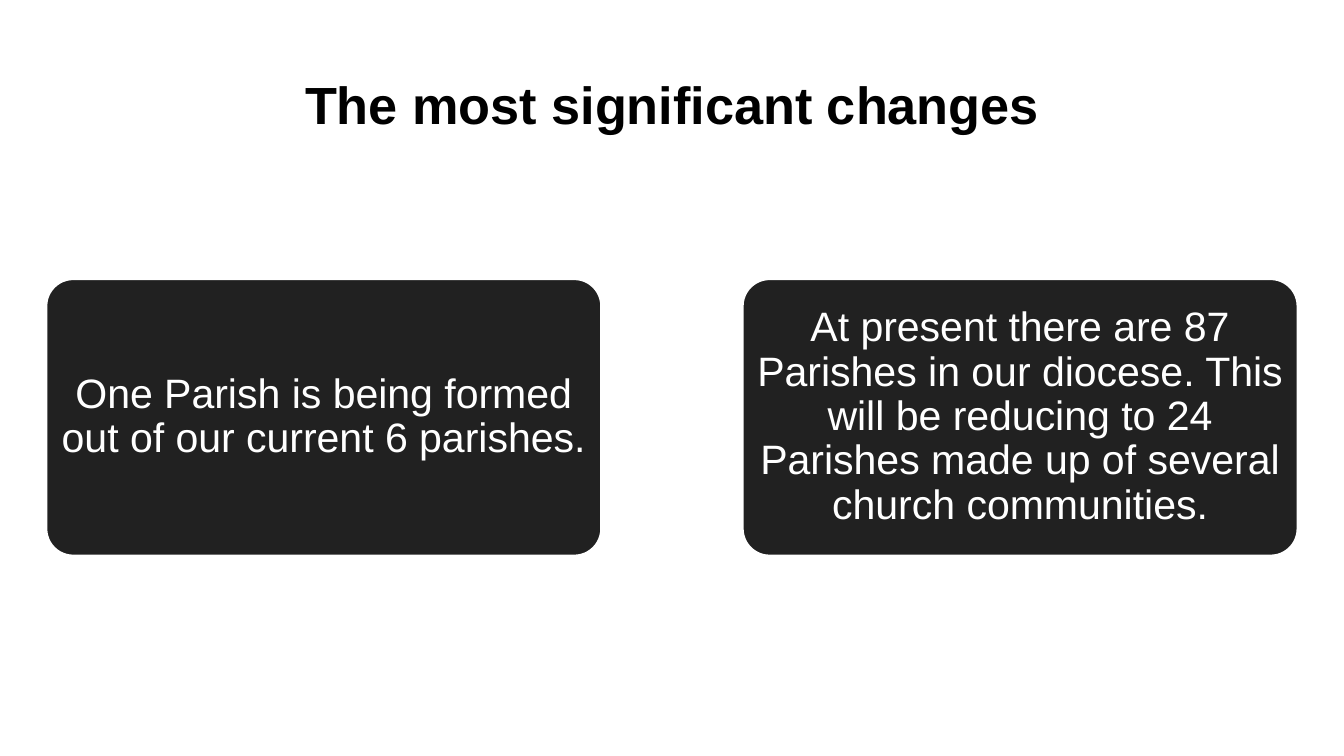
import pptx
import pptx.dml.color
import pptx.enum.shapes
import pptx.enum.text
import pptx.util
from pptx.util import Cm

BLACK = pptx.dml.color.RGBColor(0x00, 0x00, 0x00)
CHARCOAL = pptx.dml.color.RGBColor(0x21, 0x21, 0x21)
WHITE = pptx.dml.color.RGBColor(0xFF, 0xFF, 0xFF)

TITLE_ONLY_LAYOUT = 5
MARGIN = Cm(0.86)
CARD_WIDTH = Cm(10.52)
CARD_HEIGHT = Cm(5.26)
CARD_TOP = Cm(5.26)

TITLE = "The most significant changes"
CHANGES = [
    "One Parish is being formed out of our current 6 parishes.",
    "At present there are 87 Parishes in our diocese. This will be "
    "reducing to 24 Parishes made up of several church communities.",
]


def write_text(shape, text, color, size, bold, inset_x, inset_y):
    """Fill a shape with one centred paragraph."""
    frame = shape.text_frame
    frame_format = {
        "word_wrap": True,
        "auto_size": pptx.enum.text.MSO_AUTO_SIZE.NONE,
        "vertical_anchor": pptx.enum.text.MSO_ANCHOR.MIDDLE,
        "margin_left": inset_x,
        "margin_right": inset_x,
        "margin_top": inset_y,
        "margin_bottom": inset_y,
    }
    for name, value in frame_format.items():
        setattr(frame, name, value)

    paragraph = frame.paragraphs[0]
    paragraph.alignment = pptx.enum.text.PP_ALIGN.CENTER
    paragraph.line_spacing = 0.9
    run = paragraph.add_run()
    run.text = text
    font_format = {"name": "Arial", "size": pptx.util.Pt(size), "bold": bold}
    for name, value in font_format.items():
        setattr(run.font, name, value)
    run.font.color.rgb = color


def place_title(slide, left, top, width, height):
    title = slide.shapes.title
    box = {"left": left, "top": top, "width": width, "height": height}
    for name, value in box.items():
        setattr(title, name, value)
    write_text(title, TITLE, BLACK, 28, True, Cm(0.25), Cm(0.25))


def place_card(slide, text, left, top, width, height):
    card = slide.shapes.add_shape(
        pptx.enum.shapes.MSO_SHAPE.ROUNDED_RECTANGLE, left, top, width, height)
    card.adjustments[0] = 0.1
    card.shadow.inherit = False
    card.fill.solid()
    card.fill.fore_color.rgb = CHARCOAL
    card.line.color.rgb = WHITE
    card.line.width = pptx.util.Pt(2)
    write_text(card, text, WHITE, 22, False, Cm(0.12), Cm(0.08))


def place_cards(slide, left, top, width, height):
    """Spread the cards evenly from one edge of the box to the other."""
    step = (width - CARD_WIDTH) // (len(CHANGES) - 1)
    for index, text in enumerate(CHANGES):
        place_card(slide, text, left + index * step, top, CARD_WIDTH, height)


def main():
    presentation = pptx.Presentation()
    presentation.slide_width = Cm(25.4)
    presentation.slide_height = Cm(14.29)
    layout = presentation.slide_layouts[TITLE_ONLY_LAYOUT]
    slide = presentation.slides.add_slide(layout)
    content_width = presentation.slide_width - 2 * MARGIN

    place_title(slide, MARGIN, Cm(1.24), content_width, Cm(1.6))
    place_cards(slide, MARGIN, CARD_TOP, content_width, CARD_HEIGHT)
    presentation.save("out.pptx")


if __name__ == "__main__":
    main()
